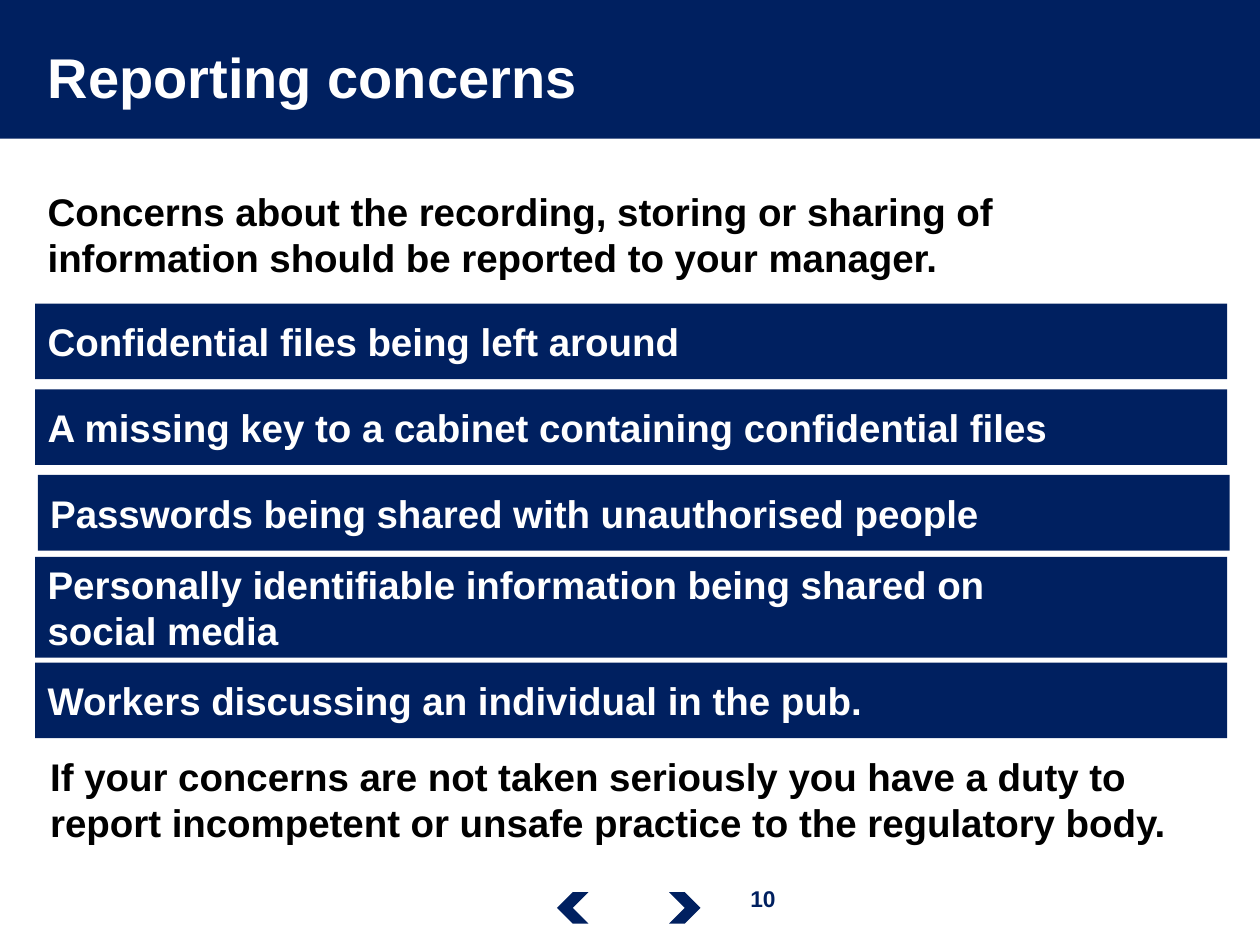
"""Build the "Reporting concerns" slide."""
from dataclasses import dataclass

from pptx import Presentation
from pptx.dml.color import RGBColor
from pptx.enum.shapes import MSO_SHAPE
from pptx.enum.text import MSO_ANCHOR, PP_ALIGN
from pptx.util import Inches, Pt


@dataclass(frozen=True)
class Theme:
    font: str = "Arial"
    navy: RGBColor = RGBColor(0x00, 0x20, 0x60)
    white: RGBColor = RGBColor(0xFF, 0xFF, 0xFF)
    black: RGBColor = RGBColor(0x00, 0x00, 0x00)
    title: int = 32
    body: int = 22
    page: int = 13


THEME = Theme()
TITLE = "Reporting concerns"
PAGE = "10"
STATEMENTS = [
    ("Concerns about the recording, storing or sharing of information "
     "should be reported to your manager.", (0.28, 1.44, 9.46, 0.84)),
    ("If your concerns are not taken seriously you have a duty to report "
     "incompetent or unsafe practice to the regulatory body.", (0.3, 5.93, 9.44, 0.84)),
]
BAR_WIDTH = 9.46
CONCERNS = [
    ("Confidential files being left around", 0.28, 2.41, 0.6),
    ("A missing key to a cabinet containing confidential files", 0.28, 3.09, 0.6),
    ("Passwords being shared with unauthorised people", 0.3, 3.77, 0.6),
    ("Personally identifiable information being shared on\nsocial media", 0.28, 4.42, 0.8),
    ("Workers discussing an individual in the pub.", 0.28, 5.26, 0.6),
]
CHEVRONS = [(5.31, 0), (4.42, 180)]


def write(shape, text, size, color, anchor=MSO_ANCHOR.TOP, align=PP_ALIGN.LEFT):
    frame = shape.text_frame
    frame.word_wrap = True
    frame.vertical_anchor = anchor
    paragraph = frame.paragraphs[0]
    paragraph.text = text
    paragraph.alignment = align
    font = paragraph.font
    font.name, font.size, font.bold = THEME.font, Pt(size), True
    font.color.rgb = color


def add_block(slide, preset, box):
    block = slide.shapes.add_shape(preset, *map(Inches, box))
    block.shadow.inherit = False
    block.fill.solid()
    block.fill.fore_color.rgb = THEME.navy
    block.line.fill.background()
    return block


def add_text(slide, text, box, size, color, align=PP_ALIGN.LEFT):
    write(slide.shapes.add_textbox(*map(Inches, box)), text, size, color, align=align)


def main():
    deck = Presentation()
    deck.slide_width, deck.slide_height = Inches(10), Inches(7.5)
    slide = deck.slides.add_slide(deck.slide_layouts[5])

    header = add_block(slide, MSO_SHAPE.RECTANGLE, (-0.02, 0, 10.02, 1.1))
    title = slide.shapes.title
    title.left, title.top, title.width, title.height = map(Inches, (0.28, 0.1, 7.9, 1.01))
    write(title, TITLE, THEME.title, THEME.white, MSO_ANCHOR.MIDDLE)
    header._element.addnext(title._element)

    add_text(slide, PAGE, (5.7, 6.97, 0.71, 0.32), THEME.page, THEME.navy, PP_ALIGN.CENTER)
    for left, rotation in CHEVRONS:
        add_block(slide, MSO_SHAPE.CHEVRON, (left, 7.08, 0.25, 0.25)).rotation = rotation

    for statement, box in STATEMENTS:
        add_text(slide, statement, box, THEME.body, THEME.black)
    for concern, left, top, height in CONCERNS:
        bar = add_block(slide, MSO_SHAPE.RECTANGLE, (left, top, BAR_WIDTH, height))
        write(bar, concern, THEME.body, THEME.white, MSO_ANCHOR.MIDDLE)

    deck.save("out.pptx")


if __name__ == "__main__":
    main()
